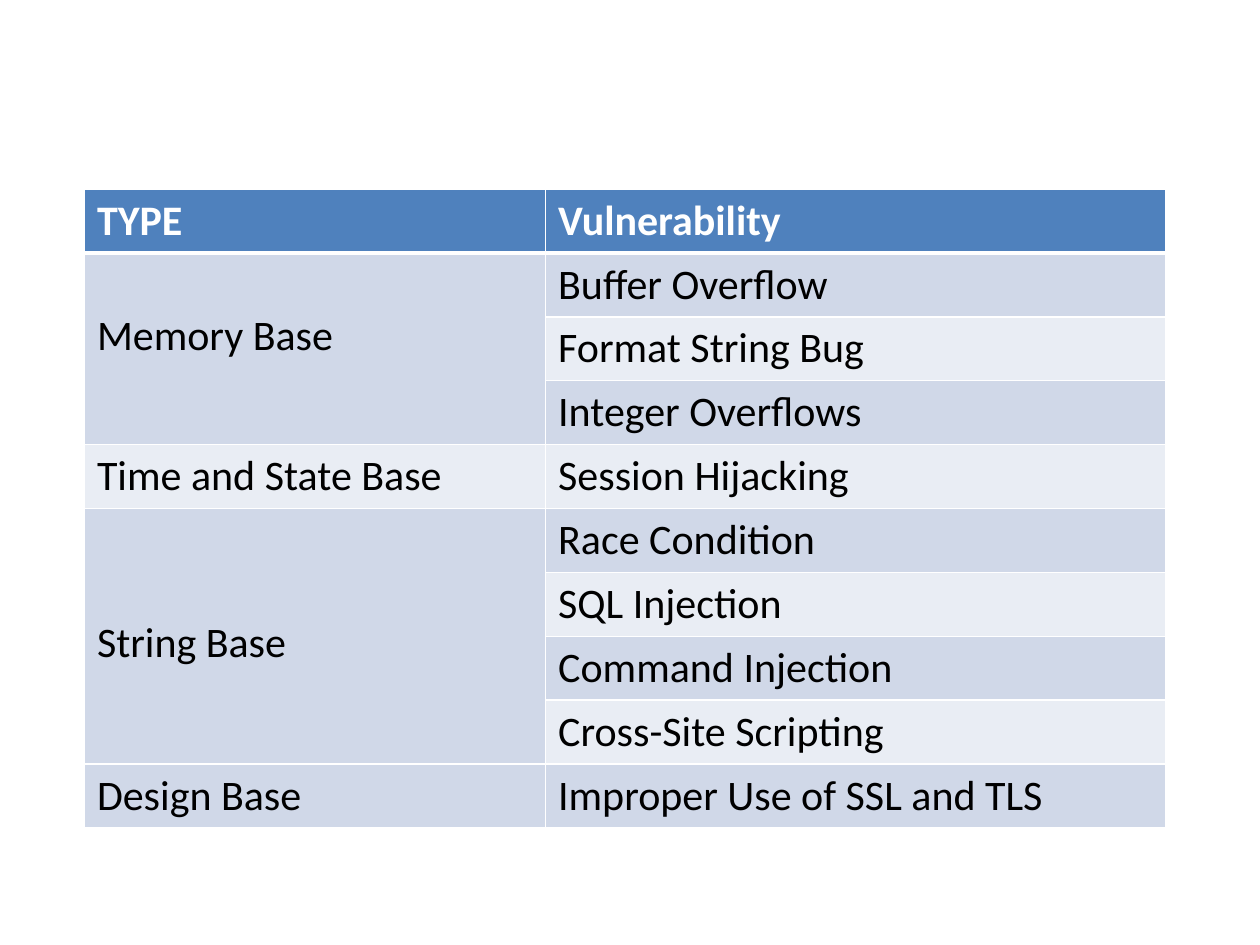
import pptx
import pptx.dml.color
import pptx.oxml
import pptx.oxml.ns
import pptx.util

COLORS = {
    "header": "4F81BD",
    "dark_band": "D0D8E8",
    "light_band": "E9EDF4",
    "line": "FFFFFF",
    "header_text": "FFFFFF",
    "body_text": "000000",
}
HEADINGS = ("TYPE", "Vulnerability")
GROUPS = [
    ("Memory Base", 1, ["Buffer Overflow", "Format String Bug", "Integer Overflows"]),
    ("Time and State Base", 0, ["Session Hijacking"]),
    ("String Base", 2, ["Race Condition", "SQL Injection", "Command Injection",
                        "Cross-Site Scripting"]),
    ("Design Base", 0, ["Improper Use of SSL and TLS"]),
]
COLUMN_WIDTHS = (3.66, 4.92)
ROW_HEIGHT = 0.506
LINE_HEIGHT = 0.407
CELL_MARGIN = 0.05
FONT = {"name": "Calibri", "size": pptx.util.Pt(24)}


def color(name):
    return pptx.dml.color.RGBColor.from_string(COLORS[name])


def set_borders(cell, row):
    widths = {"L": 1, "R": 1, "T": 3 if row == 1 else 1, "B": 3 if row == 0 else 1}
    properties = cell._tc.get_or_add_tcPr()
    for side, width in widths.items():
        properties.append(pptx.oxml.parse_xml(
            f'<a:ln{side} {pptx.oxml.ns.nsdecls("a")} w="{pptx.util.Pt(width)}">'
            f'<a:solidFill><a:srgbClr val="{COLORS["line"]}"/></a:solidFill>'
            f'</a:ln{side}>'))


def style_cell(cell, row):
    set_borders(cell, row)
    band = "header" if row == 0 else "dark_band" if row % 2 else "light_band"
    cell.fill.solid()
    cell.fill.fore_color.rgb = color(band)
    font = cell.text_frame.paragraphs[0].font
    for attribute, value in FONT.items():
        setattr(font, attribute, value)


def write_cell(cell, text, header=False, lines_down=0):
    cell.margin_top = pptx.util.Inches(CELL_MARGIN + lines_down * LINE_HEIGHT)
    run = cell.text_frame.paragraphs[0].add_run()
    run.text = text
    values = dict(FONT, bold=header)
    for attribute, value in values.items():
        setattr(run.font, attribute, value)
    run.font.color.rgb = color("header_text" if header else "body_text")


def add_vulnerability_table(slide):
    row_count = 1 + sum(len(items) for _, _, items in GROUPS)
    table = slide.shapes.add_table(
        row_count, len(HEADINGS), pptx.util.Inches(0.67), pptx.util.Inches(1.5),
        pptx.util.Inches(sum(COLUMN_WIDTHS)),
        pptx.util.Inches(row_count * ROW_HEIGHT)).table
    for column, width in zip(table.columns, COLUMN_WIDTHS):
        column.width = pptx.util.Inches(width)
    for row, table_row in enumerate(table.rows):
        table_row.height = pptx.util.Inches(ROW_HEIGHT)
        for cell in table_row.cells:
            style_cell(cell, row)
    for column, heading in enumerate(HEADINGS):
        write_cell(table.cell(0, column), heading, header=True)
    first = 1
    for group, lines_down, items in GROUPS:
        type_cell = table.cell(first, 0)
        if len(items) > 1:
            type_cell.merge(table.cell(first + len(items) - 1, 0))
        write_cell(type_cell, group, lines_down=lines_down)
        for row, item in enumerate(items, first):
            write_cell(table.cell(row, 1), item)
        first += len(items)


def main():
    presentation = pptx.Presentation()
    presentation.slide_width = pptx.util.Inches(10)
    presentation.slide_height = pptx.util.Inches(7.5)
    slide = presentation.slides.add_slide(presentation.slide_layouts[6])
    add_vulnerability_table(slide)
    presentation.save("out.pptx")


if __name__ == "__main__":
    main()
